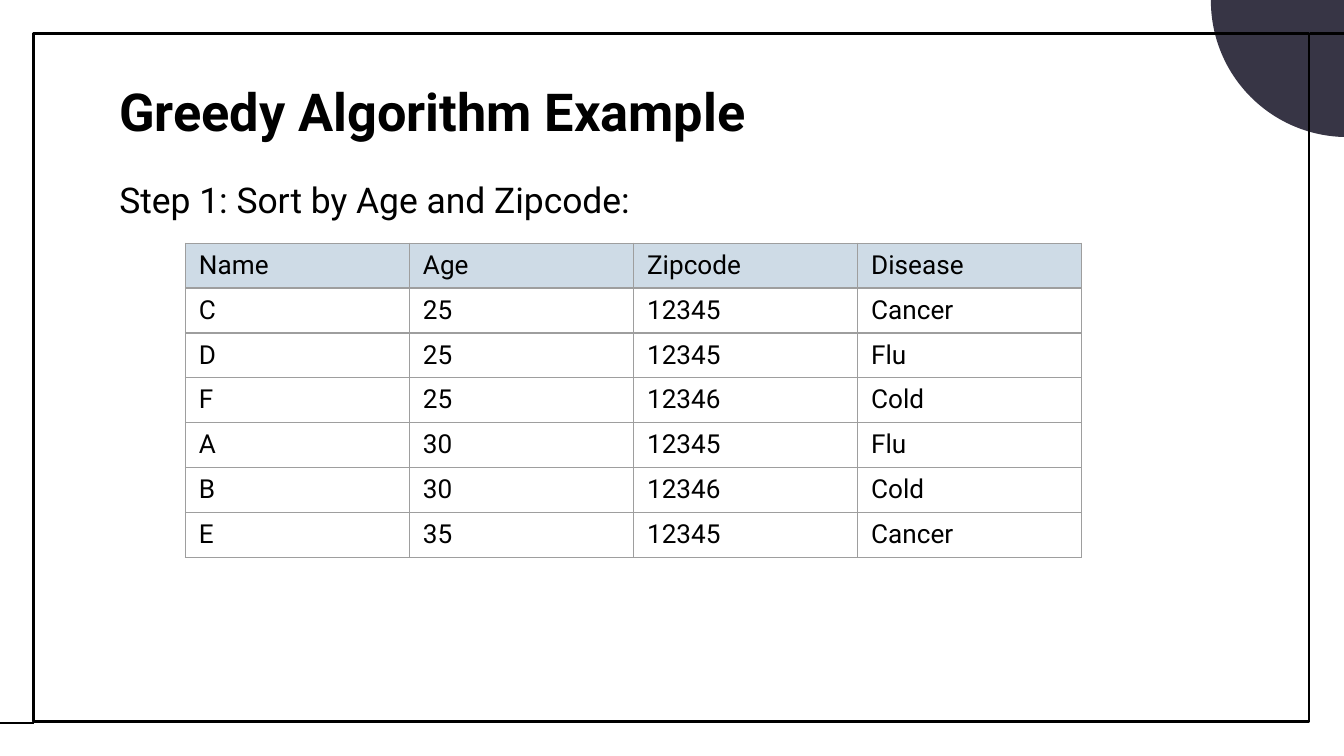
from lxml import etree
from pptx import Presentation
from pptx import util as u
from pptx.dml.color import RGBColor
from pptx.enum import shapes, text
from pptx.oxml import ns

WIDE = 10
HIGH = WIDE * 9 / 16
EDGE, BASE = 0.25, 5.38
LEFT = 0.79
BLACK, WHITE, DARK, PALE, GREY = "000000", "FFFFFF", "373545", "CEDBE6", "9E9E9E"
ROWS = [
    ("Name", "Age", "Zipcode", "Disease"),
    ("C", "25", "12345", "Cancer"),
    ("D", "25", "12345", "Flu"),
    ("F", "25", "12346", "Cold"),
    ("A", "30", "12345", "Flu"),
    ("B", "30", "12346", "Cold"),
    ("E", "35", "12345", "Cancer"),
]


def color(code):
    return RGBColor.from_string(code)


def inches(*sizes):
    return [u.Inches(size) for size in sizes]


def write(frame, words, size=14, bold=False, space=None):
    para = frame.paragraphs[0]
    para.line_spacing = space
    run = para.add_run()
    run.text = words
    run.font.name = "Roboto"
    run.font.size = u.Pt(size)
    run.font.bold = bold
    run.font.color.rgb = color(BLACK)


def add_text(slide, box, words, anchor=text.MSO_ANCHOR.TOP, **style):
    frame = slide.shapes.add_textbox(*inches(*box)).text_frame
    frame.word_wrap = True
    frame.vertical_anchor = anchor
    frame.margin_left = frame.margin_right = u.Inches(0.1)
    frame.margin_top = frame.margin_bottom = u.Inches(0.1)
    write(frame, words, **style)


def add_shape(slide, kind, box, fill=None, line=None):
    shape = slide.shapes.add_shape(kind, *inches(*box))
    shape.shadow.inherit = False
    if fill:
        shape.fill.solid()
        shape.fill.fore_color.rgb = color(fill)
    else:
        shape.fill.background()
    if line:
        shape.line.color.rgb = color(line)
        shape.line.width = u.Pt(1.5)
    else:
        shape.line.fill.background()


def add_line(slide, start, end):
    line = slide.shapes.add_connector(
        shapes.MSO_CONNECTOR.STRAIGHT, *inches(*start, *end))
    line.line.color.rgb = color(BLACK)
    line.line.width = u.Pt(1.5)
    etree.SubElement(line._element.spPr, ns.qn("a:effectLst"))


def add_border(cell):
    props = cell._tc.get_or_add_tcPr()
    for side in ("lnL", "lnR", "lnT", "lnB"):
        line = etree.SubElement(props, ns.qn(f"a:{side}"), w=str(u.Pt(0.75)))
        fill = etree.SubElement(line, ns.qn("a:solidFill"))
        etree.SubElement(fill, ns.qn("a:srgbClr"), val=GREY)


def add_table(slide, box, rows):
    table = slide.shapes.add_table(len(rows), len(rows[0]), *inches(*box)).table
    table.first_row = table.horz_banding = False
    for i, row in enumerate(rows):
        for j, words in enumerate(row):
            cell = table.cell(i, j)
            add_border(cell)
            if i == 0:
                cell.fill.solid()
                cell.fill.fore_color.rgb = color(PALE)
            else:
                cell.fill.background()
            write(cell.text_frame, words)


def main():
    deck = Presentation()
    deck.slide_width, deck.slide_height = inches(WIDE, HIGH)
    slide = deck.slides.add_slide(deck.slide_layouts[6])
    slide.background.fill.solid()
    slide.background.fill.fore_color.rgb = color(WHITE)

    kinds = shapes.MSO_SHAPE
    add_shape(slide, kinds.OVAL, (9.01, -1.01, 2.03, 2.03), fill=DARK)
    add_shape(slide, kinds.RECTANGLE, (EDGE, EDGE, 9.49, 5.12), line=BLACK)
    add_line(slide, (EDGE, BASE), (0, BASE))
    add_line(slide, (WIDE, EDGE), (WIDE - EDGE, EDGE))

    add_text(slide, (LEFT, 0.49, 8.43, 0.63), "Greedy Algorithm Example",
             size=28, bold=True)
    add_text(slide, (LEFT, 1.26, 4.66, 0.48), "Step 1: Sort by Age and Zipcode:",
             anchor=text.MSO_ANCHOR.BOTTOM, size=19, space=1.15)
    add_table(slide, (1.38, 1.81, 6.67, 2.33), ROWS)
    deck.save("out.pptx")


if __name__ == "__main__":
    main()
